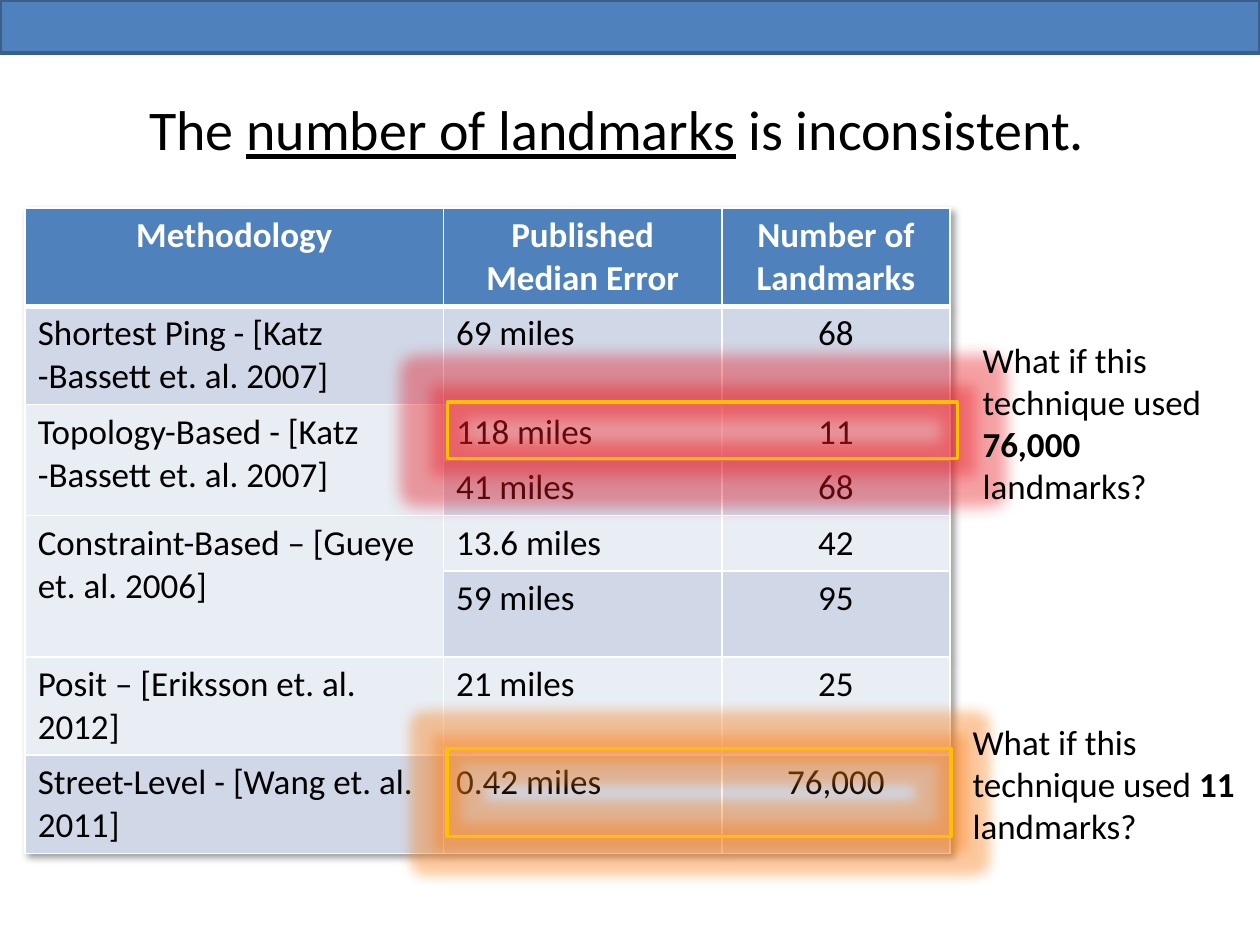
import pptx
import pptx.util
import pptx.dml.color
import pptx.enum.shapes
import pptx.enum.text
import pptx.oxml
import pptx.oxml.ns

Inches = pptx.util.Inches
Pt = pptx.util.Pt
ALIGN = pptx.enum.text.PP_ALIGN
NS = pptx.oxml.ns.nsdecls("a")

BLUE, DARK, PALE = "4F81BD", "D0D8E8", "E9EDF4"
GOLD, BLACK, WHITE = "FFC000", "000000", "FFFFFF"

WIDTHS = [3.32, 2.21, 1.81]
HEIGHTS = [0.77, 0.78, 0.44, 0.44, 0.44, 0.68, 0.78, 0.78]
HEAD = ["Methodology", "Published Median Error", "Number of Landmarks"]
# Method, error, landmarks, fill of the method cell, fill of the rest
ROWS = [
    ("Shortest Ping - [Katz -Bassett et. al. 2007]", "69 miles", "68", DARK, DARK),
    ("Topology-Based - [Katz -Bassett et. al. 2007]", "118 miles", "11", PALE, PALE),
    ("", "41 miles", "68", PALE, DARK),
    ("Constraint-Based – [Gueye et. al. 2006]", "13.6 miles", "42", PALE, PALE),
    ("", "59 miles", "95", PALE, DARK),
    ("Posit – [Eriksson et. al. 2012]", "21 miles", "25", PALE, PALE),
    ("Street-Level - [Wang et. al. 2011]", "0.42 miles", "76,000", DARK, DARK),
]


def color(code):
    return pptx.dml.color.RGBColor.from_string(code)


def add_run(para, text, size=20, tint=BLACK, bold=False, under=False):
    run = para.add_run()
    run.text = text
    font = run.font
    font.name, font.size = "Calibri", Pt(size)
    font.bold, font.underline = bold, under
    font.color.rgb = color(tint)


def add_text(slide, box):
    frame = slide.shapes.add_textbox(*map(Inches, box)).text_frame
    frame.word_wrap = True
    return frame


def add_note(slide, box, count):
    para = add_text(slide, box).paragraphs[0]
    add_run(para, "What if this technique used ")
    add_run(para, count, bold=True)
    add_run(para, " landmarks?")


def add_rect(slide, box, line, fill=None):
    kind = pptx.enum.shapes.MSO_SHAPE.RECTANGLE
    rect = slide.shapes.add_shape(kind, *map(Inches, box))
    rect.shadow.inherit = False
    if fill:
        rect.fill.solid()
        rect.fill.fore_color.rgb = color(fill)
    else:
        rect.fill.background()
    rect.line.color.rgb = color(line)
    rect.line.width = Pt(2)
    return rect


def add_frame(slide, box, glow, reach):
    """Gold outline with a soft glow around it."""
    rect = add_rect(slide, box, GOLD)
    effects = rect._element.spPr.find(pptx.oxml.ns.qn("a:effectLst"))
    effects.append(pptx.oxml.parse_xml(
        f'<a:glow {NS} rad="{Pt(reach)}"><a:srgbClr val="{glow}">'
        '<a:alpha val="40000"/></a:srgbClr></a:glow>'))


def set_edges(cell, base):
    props = cell._tc.get_or_add_tcPr()
    edges = [("lnL", 1), ("lnR", 1), ("lnT", 1), ("lnB", base)]
    for spot, (tag, width) in enumerate(edges):
        props.insert(spot, pptx.oxml.parse_xml(
            f'<a:{tag} {NS} w="{Pt(width)}"><a:solidFill>'
            f'<a:srgbClr val="{WHITE}"/></a:solidFill></a:{tag}>'))


def fill_cell(cell, text, fill, align, head=False):
    cell.fill.solid()
    cell.fill.fore_color.rgb = color(fill)
    para = cell.text_frame.paragraphs[0]
    para.alignment = align
    if text:
        add_run(para, text, tint=WHITE if head else BLACK, bold=head)
    set_edges(cell, 3 if head else 1)


def add_grid(slide):
    shape = slide.shapes.add_table(
        len(HEIGHTS), len(WIDTHS), Inches(0.2), Inches(1.65),
        Inches(sum(WIDTHS)), Inches(sum(HEIGHTS)))
    grid = shape.table
    for col, width in zip(grid.columns, WIDTHS):
        col.width = Inches(width)
    for row, height in zip(grid.rows, HEIGHTS):
        row.height = Inches(height)
    # Heading row, then the methods
    for c, text in enumerate(HEAD):
        fill_cell(grid.cell(0, c), text, BLUE, ALIGN.CENTER, True)
    for r, (name, error, count, first, rest) in enumerate(ROWS, 1):
        fill_cell(grid.cell(r, 0), name, first, ALIGN.LEFT)
        fill_cell(grid.cell(r, 1), error, rest, ALIGN.LEFT)
        fill_cell(grid.cell(r, 2), count, rest, ALIGN.CENTER)
        if not name:
            grid.cell(r - 1, 0).merge(grid.cell(r, 0))
    # Soft shadow to the lower right
    grid._tbl.tblPr.insert(0, pptx.oxml.parse_xml(
        f'<a:effectLst {NS}><a:outerShdw blurRad="{Pt(4)}" dist="{Pt(3)}" '
        f'dir="2700000" algn="tl" rotWithShape="0"><a:srgbClr val="{BLACK}">'
        '<a:alpha val="40000"/></a:srgbClr></a:outerShdw></a:effectLst>'))


def add_title(slide):
    frame = add_text(slide, (0.4, 0.4, 8.99, 1.24))
    frame.vertical_anchor = pptx.enum.text.MSO_ANCHOR.MIDDLE
    para = frame.paragraphs[0]
    para.alignment = ALIGN.CENTER
    add_run(para, "The ", 32)
    add_run(para, "number of landmarks", 32, under=True)
    add_run(para, " is inconsistent.", 32)


def main():
    deck = pptx.Presentation()
    deck.slide_width, deck.slide_height = Inches(10), Inches(7.5)
    slide = deck.slides.add_slide(deck.slide_layouts[6])
    # Top bar, table and title
    add_rect(slide, (0, 0, 10, 0.42), "3A5F8C", BLUE)
    add_grid(slide)
    add_title(slide)
    # Marked rows and the questions beside them
    add_frame(slide, (3.55, 5.94, 4, 0.7), "F97A10", 14)
    add_frame(slide, (3.55, 3.19, 4.05, 0.45), "E8141C", 18)
    add_note(slide, (7.7, 2.64, 2.3, 1.45), "76,000")
    add_note(slide, (7.62, 5.67, 2.65, 1.11), "11")
    deck.save("out.pptx")


if __name__ == "__main__":
    main()
